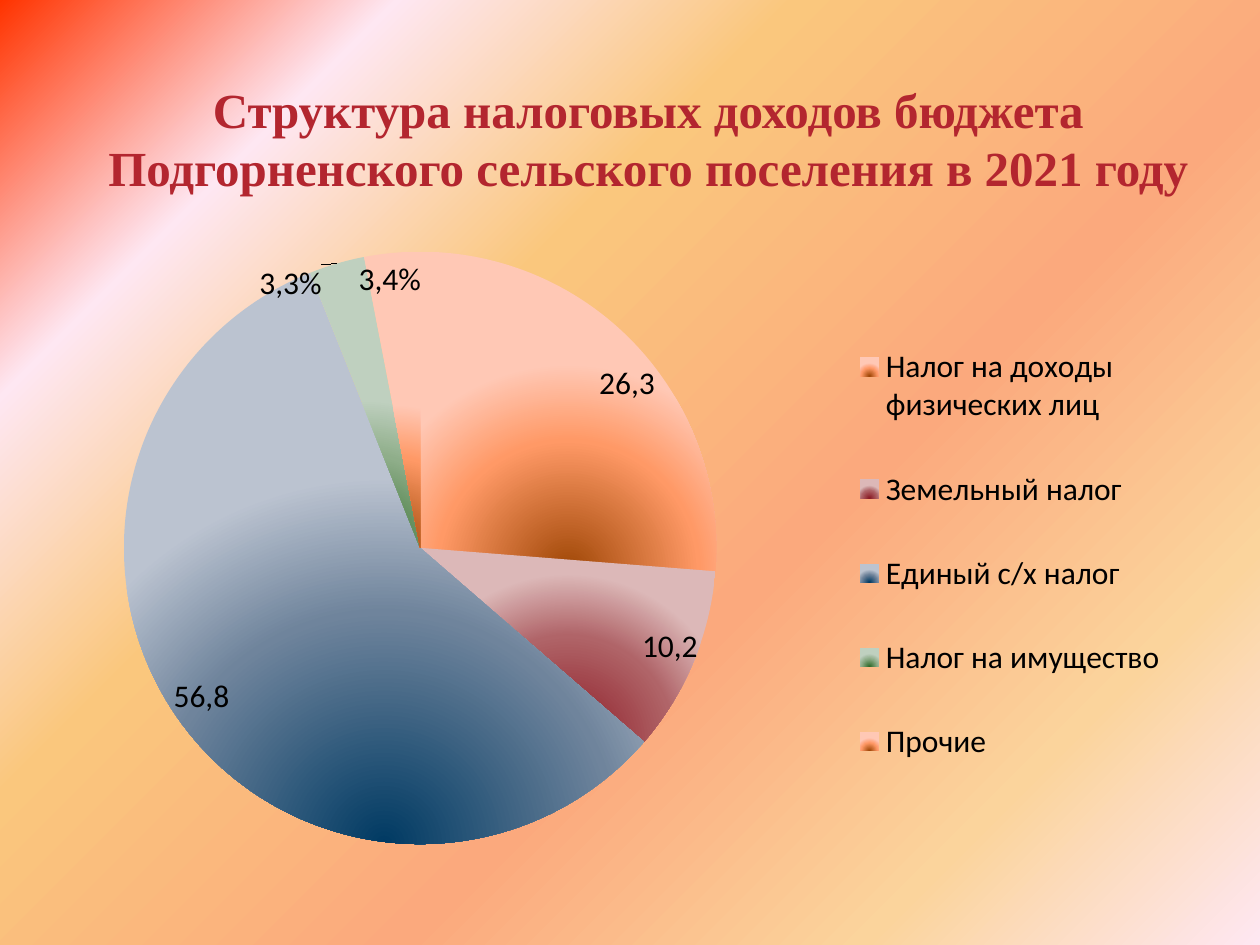
from typing import NamedTuple

from lxml.etree import SubElement
from pptx import Presentation
from pptx.chart.data import CategoryChartData
from pptx.dml.color import RGBColor
from pptx.enum.chart import XL_CHART_TYPE, XL_LABEL_POSITION, XL_LEGEND_POSITION
from pptx.enum.text import MSO_ANCHOR, PP_ALIGN
from pptx.oxml.ns import qn
from pptx.util import Pt


class Offset(NamedTuple):
    """Shift of a label, as fractions of the chart size."""
    x: float
    y: float


class Tax(NamedTuple):
    name: str
    share: int
    label: str
    label_offset: Offset
    shades: tuple[str, str, str]


class Area(NamedTuple):
    """Place inside the chart, as fractions of its size."""
    x: float
    y: float
    w: float
    h: float


ORANGE = ("9F4706", "FF9966", "FFC8B5")
TAXES = [
    Tax("Налог на доходы физических лиц", 26, "26,3",
        Offset(0.02, 0.02), ORANGE),
    Tax("Земельный налог", 10, "10,2",
        Offset(0.01, 0.01), ("8B1A24", "B06468", "DCB8B8")),
    Tax("Единый с/х налог", 57, "56,8",
        Offset(-0.01, 0), ("003A63", "6F849C", "BBC3D0")),
    Tax("Налог на имущество", 3, "3,3%",
        Offset(-0.07, -0.01), ("2F6B2A", "8FAE8A", "BFD0BF")),
    Tax("Прочие", 3, "3,4%", Offset(-0.03, 0), ORANGE),
]
SHADE_STOPS = (0, 60, 95)
BACKGROUND = [(0, "FF3300"), (18, "FEE7F2"), (36, "FAC77D"),
              (61, "FBA97D"), (82, "FBD49C"), (100, "FEE7F2")]
PIE_AREA = Area(0.01, 0.05, 0.61, 0.95)
LEGEND_AREA = Area(0.68, 0.13, 0.31, 0.81)


def color(value: str) -> RGBColor:
    return RGBColor.from_string(value)


def set_stops(gradient, stops) -> None:
    """Empty the gradient element and give it new stops."""
    for child in list(gradient):
        gradient.remove(child)
    stop_list = SubElement(gradient, qn("a:gsLst"))
    for position, value in stops:
        stop = SubElement(stop_list, qn("a:gs"), pos=str(position * 1000))
        SubElement(stop, qn("a:srgbClr"), val=value)


def paint_background(slide) -> None:
    slide.background.fill.gradient()
    gradient = next(slide.element.iter(qn("a:gradFill")))
    set_stops(gradient, BACKGROUND)
    SubElement(gradient, qn("a:lin"), ang=str(45 * 60000), scaled="0")


def add_title(slide, wording: str) -> None:
    title = slide.shapes.title
    title.left, title.top = Pt(50.4), Pt(39.6)
    title.width, title.height = Pt(640), Pt(131.8)
    frame = title.text_frame
    frame.word_wrap = True
    frame.vertical_anchor = MSO_ANCHOR.MIDDLE
    frame.margin_bottom = Pt(57)
    paragraph = frame.paragraphs[0]
    paragraph.alignment = PP_ALIGN.CENTER
    run = paragraph.add_run()
    run.text = wording
    run.font.name = "Times New Roman"
    run.font.size = Pt(28)
    run.font.bold = True
    run.font.color.rgb = color("B3262F")


def style_font(font) -> None:
    font.name = "Calibri"
    font.size = Pt(18)
    font.bold = False
    font.color.rgb = color("000000")


def place(parent, index: int, settings: dict[str, str | float]) -> None:
    """Give a chart part a manual layout as its child number index."""
    for old in parent.findall(qn("c:layout")):
        parent.remove(old)
    layout = SubElement(parent, qn("c:layout"))
    parent.insert(index, layout)
    manual = SubElement(layout, qn("c:manualLayout"))
    for tag, value in settings.items():
        SubElement(manual, qn(f"c:{tag}"), val=str(value))


def area_settings(area: Area) -> dict[str, str | float]:
    return {"xMode": "edge", "yMode": "edge", **area._asdict()}


def add_tax_pie(slide) -> None:
    data = CategoryChartData()
    data.categories = [tax.name for tax in TAXES]
    data.add_series("Series 1", [tax.share for tax in TAXES])
    chart = slide.shapes.add_chart(
        XL_CHART_TYPE.PIE, Pt(36), Pt(126), Pt(648), Pt(356.4), data).chart
    chart.has_title = False
    style_font(chart.font)
    chart.has_legend = True
    chart.legend.position = XL_LEGEND_POSITION.RIGHT
    chart.legend.include_in_layout = False

    plot = chart.plots[0]
    plot.vary_by_categories = True
    plot.has_data_labels = True
    plot.data_labels.show_percentage = True
    plot.data_labels.show_value = False
    for tax, point in zip(TAXES, plot.series[0].points):
        point.format.fill.gradient()
        point.format.line.fill.background()
        label = point.data_label
        run = label.text_frame.paragraphs[0].add_run()
        run.text = tax.label
        style_font(run.font)
        label.position = XL_LABEL_POSITION.INSIDE_END

    gradients = chart.element.iter(qn("a:gradFill"))
    labels = chart.element.iter(qn("c:dLbl"))
    for tax, gradient, label in zip(TAXES, list(gradients), list(labels)):
        set_stops(gradient, zip(SHADE_STOPS, tax.shades))
        focus = SubElement(gradient, qn("a:path"), path="circle")
        SubElement(focus, qn("a:fillToRect"),
                   l="50000", t="100000", r="50000", b="0")
        place(label, 1, tax.label_offset._asdict())

    place(next(chart.element.iter(qn("c:plotArea"))), 0,
          {"layoutTarget": "inner", **area_settings(PIE_AREA)})
    place(next(chart.element.iter(qn("c:legend"))), 1,
          area_settings(LEGEND_AREA))


def main() -> None:
    deck = Presentation()
    deck.slide_width, deck.slide_height = Pt(720), Pt(540)
    slide = deck.slides.add_slide(deck.slide_layouts[5])
    paint_background(slide)
    add_title(slide, "Структура налоговых доходов бюджета "
                     "Подгорненского сельского поселения в 2021 году")
    add_tax_pie(slide)
    deck.save("out.pptx")


if __name__ == "__main__":
    main()
